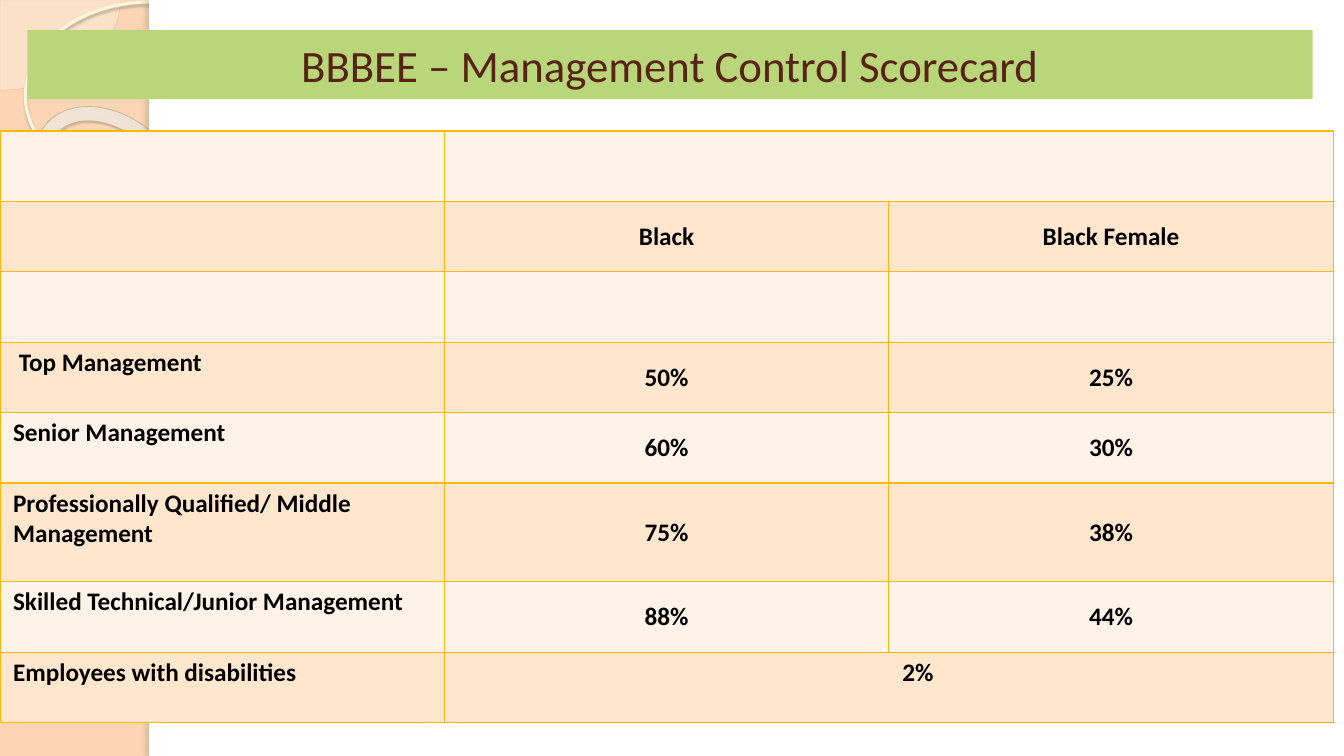
from dataclasses import dataclass

from lxml.etree import SubElement
from pptx import Presentation
from pptx.dml.color import RGBColor
from pptx.enum.shapes import MSO_SHAPE
from pptx.enum.text import MSO_ANCHOR, MSO_AUTO_SIZE, PP_ALIGN
from pptx.oxml.ns import qn
from pptx.util import Cm, Pt


@dataclass(frozen=True)
class Theme:
    """Colours and type of the slide."""
    font: str = "Calibri"
    title_size: int = 32
    cell_size: int = 18
    background: str = "FCD5B4"
    panel: str = "FFFFFF"
    panel_shadow: str = "736F63"
    pie: str = "FEFAF4"
    pie_line: str = "D3C39F"
    circle_line: str = "FFF5DE"
    circle_shadow: str = "B0A68F"
    ring_line: str = "C7B893"
    ring_shadow: str = "5A5444"
    ring_stops: tuple = ((0, "FFFCF6", 70), (70, "FFFEFB", 55), (100, "F0D28E", 60))
    title_fill: str = "B9D77A"
    title_text: str = "572314"
    cell_text: str = "000000"
    bands: tuple = ("FFF3E7", "FFE6CC")
    border: str = "FEB80A"


@dataclass(frozen=True)
class Box:
    """A rectangle in centimetres."""
    left: float
    top: float
    width: float
    height: float

    def inner(self, left, top, width, height):
        """Return a box placed relative to this one."""
        return Box(self.left + left, self.top + top, width, height)

    def lengths(self):
        """Return left, top, width and height as lengths."""
        return Cm(self.left), Cm(self.top), Cm(self.width), Cm(self.height)


THEME = Theme()
SLIDE = Box(0, 0, 33.87, 19.05)
SIDEBAR_WIDTH = 3.76
TALL_ROW, TALL_HEIGHT = 5, 2.49
SCORECARD = (
    ("", "", ""),
    ("", "Black", "Black Female"),
    ("", "", ""),
    (" Top Management", "50%", "25%"),
    ("Senior Management", "60%", "30%"),
    ("Professionally Qualified/ Middle Management", "75%", "38%"),
    ("Skilled Technical/Junior Management", "88%", "44%"),
    ("Employees with disabilities", "2%", ""),
)


def add_colour(parent, colour, opacity=100):
    """Append an RGB colour with its opacity in percent."""
    rgb = SubElement(parent, qn("a:srgbClr"), val=colour)
    if opacity < 100:
        SubElement(rgb, qn("a:alpha"), val=str(opacity * 1000))


def add_figure(slide, preset, box, fill=None, line=None, weight=0):
    """Add a preset shape without shadow."""
    figure = slide.shapes.add_shape(preset, *box.lengths())
    figure.shadow.inherit = False
    if fill:
        figure.fill.solid()
        figure.fill.fore_color.rgb = RGBColor.from_string(fill)
    else:
        figure.fill.background()
    if line:
        figure.line.color.rgb = RGBColor.from_string(line)
        figure.line.width = Pt(weight)
    else:
        figure.line.fill.background()
    return figure


def add_shadow(figure, colour, opacity, blur, distance, angle):
    """Give a shape an outer shadow."""
    effects = figure.element.spPr.find(qn("a:effectLst"))
    shadow = SubElement(effects, qn("a:outerShdw"), blurRad=str(Pt(blur)),
                        dist=str(Pt(distance)), dir=str(angle * 60000),
                        algn="tl", rotWithShape="0")
    add_colour(shadow, colour, opacity)


def fill_radially(figure, stops):
    """Replace the empty fill of a shape with a circular gradient."""
    properties = figure.element.spPr
    empty = properties.find(qn("a:noFill"))
    gradient = SubElement(properties, qn("a:gradFill"), rotWithShape="1")
    stop_list = SubElement(gradient, qn("a:gsLst"))
    for position, colour, opacity in stops:
        stop = SubElement(stop_list, qn("a:gs"), pos=str(position * 1000))
        add_colour(stop, colour, opacity)
    focus = SubElement(gradient, qn("a:path"), path="circle")
    SubElement(focus, qn("a:fillToRect"), l="-408000", t="-50000", r="508000", b="150000")
    properties.replace(empty, gradient)


def draw_backdrop(slide, box):
    """Draw the ornamented sidebar and the white panel."""
    slide.background.fill.solid()
    slide.background.fill.fore_color.rgb = RGBColor.from_string(THEME.background)

    pie = add_figure(slide, MSO_SHAPE.PIE, box.inner(-3.03, -2.27, 6.06, 4.54),
                     THEME.pie, THEME.pie_line, 0.25)
    pie.adjustments[0] = 0
    pie.adjustments[1] = 54.02
    add_colour_parent = pie.element.spPr.find(qn("a:solidFill"))
    SubElement(add_colour_parent[0], qn("a:alpha"), val="33000")

    circle = add_figure(slide, MSO_SHAPE.OVAL, box.inner(0.64, 0.05, 6.3, 4.72),
                        line=THEME.circle_line, weight=2.15)
    add_shadow(circle, THEME.circle_shadow, 85, 2, 2, 90)

    ring = add_figure(slide, MSO_SHAPE.DONUT, box.inner(0.69, 2.92, 4.17, 3.07),
                      line=THEME.ring_line, weight=0.58)
    ring.adjustments[0] = 0.12
    ring.rotation = 38.6
    fill_radially(ring, THEME.ring_stops)
    add_shadow(ring, THEME.ring_shadow, 35, 1, 1.2, 75)

    panel_width = box.width - SIDEBAR_WIDTH
    add_figure(slide, MSO_SHAPE.RECTANGLE,
               box.inner(SIDEBAR_WIDTH, 0, panel_width, box.height), THEME.panel)
    edge = add_figure(slide, MSO_SHAPE.RECTANGLE,
                      box.inner(SIDEBAR_WIDTH, 0, 0.28, box.height), THEME.panel)
    add_shadow(edge, THEME.panel_shadow, 25, 3, 3, 180)


def format_text(paragraph, size, colour, bold):
    """Set the type of every run in a paragraph."""
    for run in paragraph.runs:
        run.font.name = THEME.font
        run.font.size = Pt(size)
        run.font.bold = bold
        run.font.color.rgb = RGBColor.from_string(colour)


def place_title(slide, box):
    """Place the title banner in front of the backdrop."""
    title = slide.shapes.title
    slide.shapes.element.append(title.element)
    title.left, title.top, title.width, title.height = box.lengths()
    title.fill.solid()
    title.fill.fore_color.rgb = RGBColor.from_string(THEME.title_fill)
    frame = title.text_frame
    frame.text = "BBBEE – Management Control Scorecard"
    frame.auto_size = MSO_AUTO_SIZE.NONE
    frame.vertical_anchor = MSO_ANCHOR.MIDDLE
    frame.paragraphs[0].alignment = PP_ALIGN.CENTER
    format_text(frame.paragraphs[0], THEME.title_size, THEME.title_text, False)


def format_cell(cell, text, band, centred, anchor):
    """Write one table cell with its borders, band and alignment."""
    properties = cell._tc.get_or_add_tcPr()
    for side in ("a:lnL", "a:lnR", "a:lnT", "a:lnB"):
        border = SubElement(properties, qn(side), w=str(Pt(1)))
        add_colour(SubElement(border, qn("a:solidFill")), THEME.border)
    cell.fill.solid()
    cell.fill.fore_color.rgb = RGBColor.from_string(band)
    cell.margin_left = cell.margin_right = Cm(0.33)
    cell.margin_top = cell.margin_bottom = Cm(0.13)
    cell.vertical_anchor = anchor
    cell.text_frame.text = text
    paragraph = cell.text_frame.paragraphs[0]
    paragraph.alignment = PP_ALIGN.CENTER if centred else PP_ALIGN.LEFT
    format_text(paragraph, THEME.cell_size, THEME.cell_text, True)


def draw_scorecard(slide, box):
    """Draw the table of management control targets."""
    last = len(SCORECARD) - 1
    scorecard = slide.shapes.add_table(len(SCORECARD), 3, *box.lengths()).table
    scorecard.first_row = scorecard.horz_banding = False
    for column in scorecard.columns:
        column.width = Cm(box.width / 3)
    for r, entries in enumerate(SCORECARD):
        height = TALL_HEIGHT if r == TALL_ROW else (box.height - TALL_HEIGHT) / last
        scorecard.rows[r].height = Cm(height)
        for c, text in enumerate(entries):
            anchor = MSO_ANCHOR.MIDDLE if c and r < last else MSO_ANCHOR.TOP
            format_cell(scorecard.cell(r, c), text, THEME.bands[r % 2], c > 0, anchor)
    for r in (0, last):
        scorecard.cell(r, 1).merge(scorecard.cell(r, 2))
    disability_target = scorecard.cell(last, 1).text_frame.paragraphs[0]
    disability_target._p.get_or_add_pPr().set("marL", str(Cm(1.47)))


def main():
    """Build and save the presentation."""
    presentation = Presentation()
    presentation.slide_width, presentation.slide_height = SLIDE.lengths()[2:]
    slide = presentation.slides.add_slide(presentation.slide_layouts[5])
    draw_backdrop(slide, SLIDE)
    place_title(slide, SLIDE.inner(0.69, 0.76, 32.39, 1.73))
    draw_scorecard(slide, SLIDE.inner(0, 3.3, 33.6, 14.91))
    presentation.save("out.pptx")


if __name__ == "__main__":
    main()
